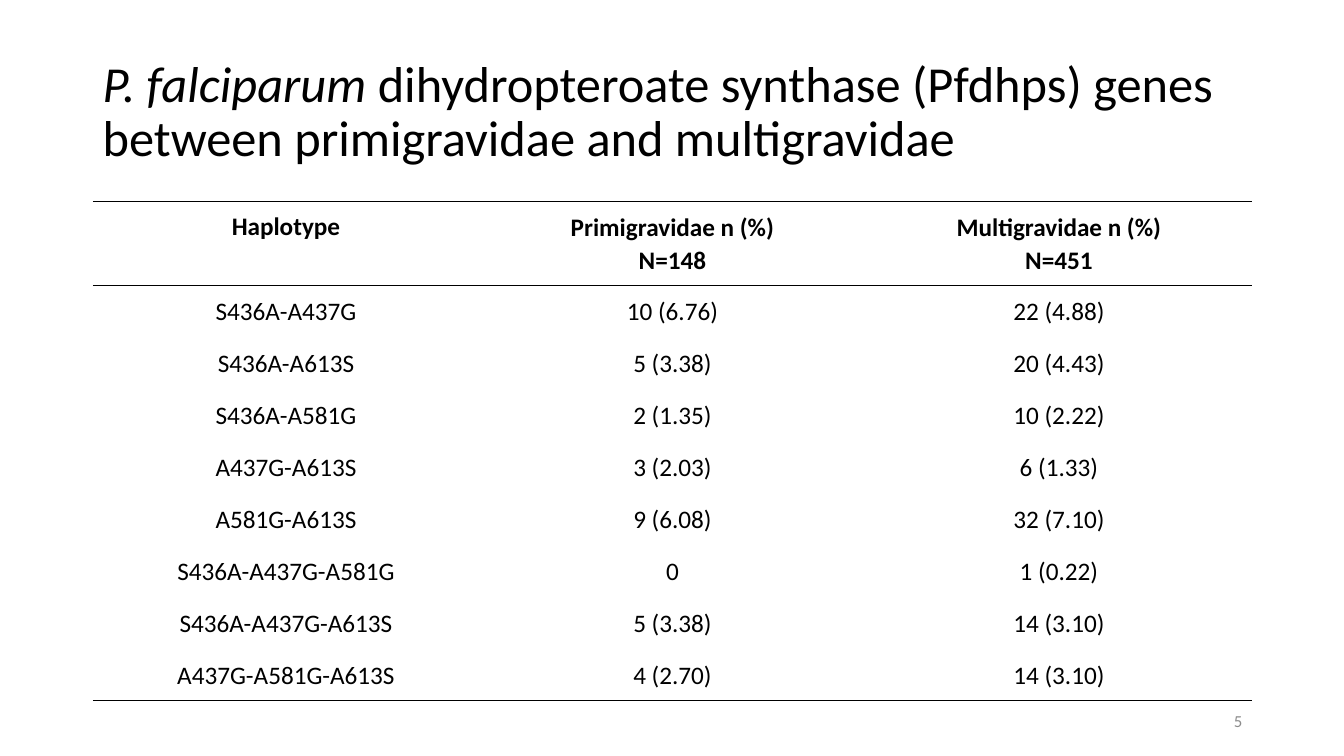
"""Build a slide with a table of Pfdhps haplotypes by gravidity."""
from dataclasses import dataclass
from typing import Any

import lxml.etree
import pptx
import pptx.dml.color
import pptx.enum.text
import pptx.oxml
import pptx.oxml.ns
import pptx.util

Inches = pptx.util.Inches
ALIGN = pptx.enum.text.PP_ALIGN
ANCHOR = pptx.enum.text.MSO_ANCHOR
COLORS = {"text": "000000", "number": "8C8C8C"}
FONT = "Calibri"
NO_GRID_STYLE = "{2D5ABB26-0587-4C30-8999-92F81FD0307C}"
LEFT, TOP, WIDTH, HEIGHT = 0.92, 2.0, 11.5, 4.95
HEADER_HEIGHT = 0.83


@dataclass(frozen=True)
class Haplotype:
    """Counts and percentages of one haplotype."""

    name: str
    primigravidae: str
    multigravidae: str


HEADERS = (
    ("Haplotype",),
    ("Primigravidae n (%)", "N=148"),
    ("Multigravidae n (%)", "N=451"),
)
HAPLOTYPES = (
    Haplotype("S436A-A437G", "10 (6.76)", "22 (4.88)"),
    Haplotype("S436A-A613S", "5 (3.38)", "20 (4.43)"),
    Haplotype("S436A-A581G", "2 (1.35)", "10 (2.22)"),
    Haplotype("A437G-A613S", "3 (2.03)", "6 (1.33)"),
    Haplotype("A581G-A613S", "9 (6.08)", "32 (7.10)"),
    Haplotype("S436A-A437G-A581G", "0", "1 (0.22)"),
    Haplotype("S436A-A437G-A613S", "5 (3.38)", "14 (3.10)"),
    Haplotype("A437G-A581G-A613S", "4 (2.70)", "14 (3.10)"),
)


def add_run(p: Any, text: str, *, size: float, color: str = "text",
            bold: bool = False, italic: bool = False) -> None:
    """Append a formatted run to a paragraph."""
    r = p.add_run()
    r.text = text
    r.font.name = FONT
    r.font.size = pptx.util.Pt(size)
    r.font.bold = bold
    r.font.italic = italic
    r.font.color.rgb = pptx.dml.color.RGBColor.from_string(COLORS[color])


def add_box(slide: Any, left: float, top: float, width: float, height: float,
            align: Any = ALIGN.LEFT) -> Any:
    """Add a wrapped, vertically centred text box and return its paragraph."""
    sp = slide.shapes.add_textbox(Inches(left), Inches(top), Inches(width), Inches(height))
    tf = sp.text_frame
    tf.word_wrap = True
    tf.vertical_anchor = ANCHOR.MIDDLE
    p = tf.paragraphs[0]
    p.alignment = align
    return p


def add_border(cell: Any, side: str) -> None:
    """Add a one-point border to the side T or B of a cell."""
    ns = pptx.oxml.ns.qn
    ln = lxml.etree.SubElement(cell._tc.get_or_add_tcPr(), ns(f"a:ln{side}"),
                               w=str(pptx.util.Pt(1)))
    fill = lxml.etree.SubElement(ln, ns("a:solidFill"))
    lxml.etree.SubElement(fill, ns("a:srgbClr"), val=COLORS["text"])


def fill_cell(cell: Any, lines: tuple[str, ...], *, bold: bool, borders: str) -> None:
    """Write centred lines into a cell and give it its borders."""
    for side in borders:
        add_border(cell, side)
    cell.fill.background()
    cell.margin_left = cell.margin_right = Inches(0.05)
    cell.margin_top = cell.margin_bottom = 0
    cell.vertical_anchor = ANCHOR.MIDDLE
    tf = cell.text_frame
    for i, line in enumerate(lines):
        p = tf.add_paragraph() if i else tf.paragraphs[0]
        p.alignment = ALIGN.CENTER
        p.line_spacing = 1.07
        add_run(p, line, size=18, bold=bold)


def add_haplotype_table(slide: Any) -> None:
    """Add the table with its header and one row per haplotype."""
    frame = slide.shapes.add_table(len(HAPLOTYPES) + 1, len(HEADERS), Inches(LEFT),
                                   Inches(TOP), Inches(WIDTH), Inches(HEIGHT))
    table = frame.table
    table.first_row = table.horz_banding = False
    table._tbl.tblPr.find(pptx.oxml.ns.qn("a:tableStyleId")).text = NO_GRID_STYLE
    for column in table.columns:
        column.width = Inches(WIDTH / len(HEADERS))
    for i, row in enumerate(table.rows):
        body_height = (HEIGHT - HEADER_HEIGHT) / len(HAPLOTYPES)
        row.height = Inches(body_height if i else HEADER_HEIGHT)

    for col, lines in enumerate(HEADERS):
        fill_cell(table.cell(0, col), lines, bold=True, borders="TB")
    table.cell(0, 0).vertical_anchor = ANCHOR.TOP
    table.cell(0, 0).margin_top = Inches(0.08)
    for row, h in enumerate(HAPLOTYPES, start=1):
        borders = "B" if row == len(HAPLOTYPES) else ""
        for col, text in enumerate((h.name, h.primigravidae, h.multigravidae)):
            fill_cell(table.cell(row, col), (text,), bold=False, borders=borders)


def main() -> None:
    """Build and save the slide."""
    prs = pptx.Presentation()
    prs.slide_width, prs.slide_height = Inches(13.33), Inches(7.5)
    slide = prs.slides.add_slide(prs.slide_layouts[6])

    title = add_box(slide, LEFT, 0.4, WIDTH, 1.45)
    title.line_spacing = 0.9
    add_run(title, "P. falciparum ", size=36, italic=True)
    add_run(title, "dihydropteroate synthase (Pfdhps) genes between "
                   "primigravidae and multigravidae", size=36)

    add_haplotype_table(slide)
    number = add_box(slide, 9.42, 6.95, 3, 0.4, ALIGN.RIGHT)
    add_run(number, "5", size=12, color="number")
    prs.save("out.pptx")


if __name__ == "__main__":
    main()
